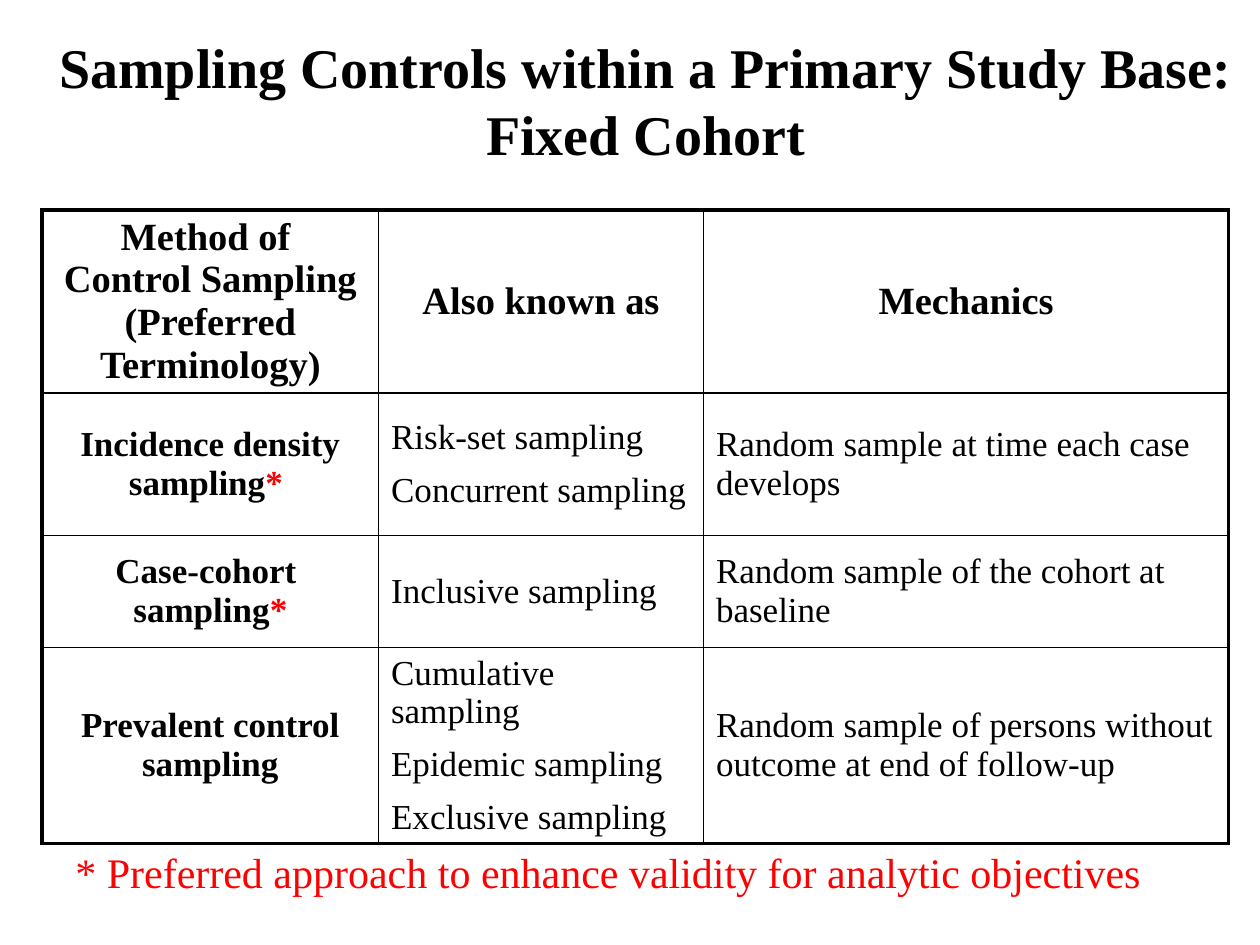
from lxml.etree import SubElement
from pptx import Presentation
from pptx.dml.color import RGBColor
from pptx.enum.text import MSO_ANCHOR as ANCHOR, PP_ALIGN as ALIGN
from pptx.oxml.ns import qn
from pptx.util import Cm, Pt

# Content: a cell is a list of paragraphs, "\v" breaks a line
BLACK, RED, WHITE = "000000", "FF0000", "FFFFFF"
FONT = "Times New Roman"
TITLE = "Sampling Controls within a Primary Study Base: Fixed Cohort"
FOOTNOTE = "* Preferred approach to enhance validity for analytic objectives"
HEADERS = ["Method of \vControl Sampling (Preferred Terminology)",
           "Also known as", "Mechanics"]
# Method, mark of preference, other names, mechanics
METHODS = [
    ("Incidence density sampling", "* ",
     ["Risk-set sampling", "Concurrent sampling"],
     "Random sample at time each case develops"),
    ("Case-cohort \vsampling", "*",
     ["Inclusive sampling"],
     "Random sample of the cohort at baseline"),
    ("Prevalent control sampling", "",
     ["Cumulative sampling", "Epidemic sampling", "Exclusive sampling"],
     "Random sample of persons without outcome at end of follow-up"),
]
COL_WIDTHS = [6.78, 6.55, 10.59]
ROW_HEIGHTS = [3.68, 2.87, 2.26, 3.94]
THIN, THICK = 1, 2.25


def rgb(code):
    return RGBColor.from_string(code)


def add_run(p, text, size=20, color=BLACK, bold=False):
    for i, line in enumerate(text.split("\v")):
        if i:
            p.add_line_break()
        r = p.add_run()
        r.text = line
        r.font.name, r.font.size, r.font.bold = FONT, Pt(size), bold
        r.font.color.rgb = rgb(color)


def write(tf, lines, align=ALIGN.LEFT, mark="", before=0, **fmt):
    tf.word_wrap = True
    for i, line in enumerate(lines):
        p = tf.add_paragraph() if i else tf.paragraphs[0]
        p.alignment = align
        p.space_before = Pt(before)
        add_run(p, line, **fmt)
    if mark:
        add_run(p, mark, **{**fmt, "color": RED})


def set_borders(cell, widths):
    tc_pr = cell._tc.get_or_add_tcPr()
    for i, (side, width) in enumerate(widths.items()):
        ln = SubElement(tc_pr, qn("a:ln" + side), w=str(Pt(width)))
        fill = SubElement(ln, qn("a:solidFill"))
        SubElement(fill, qn("a:srgbClr"), val=BLACK)
        tc_pr.remove(ln)
        tc_pr.insert(i, ln)  # borders come before the cell fill


prs = Presentation()
prs.slide_width, prs.slide_height = Cm(25.4), Cm(19.05)
s = prs.slides.add_slide(prs.slide_layouts[5])

# Title
title = s.shapes.title
title.left, title.top, title.width, title.height = Cm(0.85), Cm(0.42), Cm(24.34), Cm(3.18)
title.text_frame.vertical_anchor = ANCHOR.MIDDLE
write(title.text_frame, [TITLE], align=ALIGN.CENTER, size=32, bold=True)

# Table of sampling methods
rows, cols = len(ROW_HEIGHTS), len(COL_WIDTHS)
table = s.shapes.add_table(rows, cols, Cm(0.85), Cm(4.23),
                           Cm(sum(COL_WIDTHS)), Cm(sum(ROW_HEIGHTS))).table
table.horz_banding = False
for col, width in zip(table.columns, COL_WIDTHS):
    col.width = Cm(width)
for row, height in zip(table.rows, ROW_HEIGHTS):
    row.height = Cm(height)

for r in range(rows):
    for c in range(cols):
        cell = table.cell(r, c)
        cell.vertical_anchor = ANCHOR.MIDDLE if (r, c) != (0, 0) else ANCHOR.TOP
        cell.fill.solid()
        cell.fill.fore_color.rgb = rgb(WHITE)
        outer = {"L": c == 0, "R": c == cols - 1, "T": r == 0, "B": r == rows - 1}
        set_borders(cell, {k: THICK if edge else THIN for k, edge in outer.items()})

for c, header in enumerate(HEADERS):
    write(table.cell(0, c).text_frame, [header], align=ALIGN.CENTER,
          before=8.8, size=22, bold=True)
for r, (method, mark, names, mechanics) in enumerate(METHODS, start=1):
    write(table.cell(r, 0).text_frame, [method], align=ALIGN.CENTER,
          mark=mark, before=8, bold=True)
    write(table.cell(r, 1).text_frame, names, before=8)
    write(table.cell(r, 2).text_frame, [mechanics], before=8)

# Footnote
note = s.shapes.add_textbox(Cm(1.27), Cm(16.93), Cm(23.5), Cm(1.27))
write(note.text_frame, [FOOTNOTE], size=24, color=RED)

prs.save("out.pptx")
